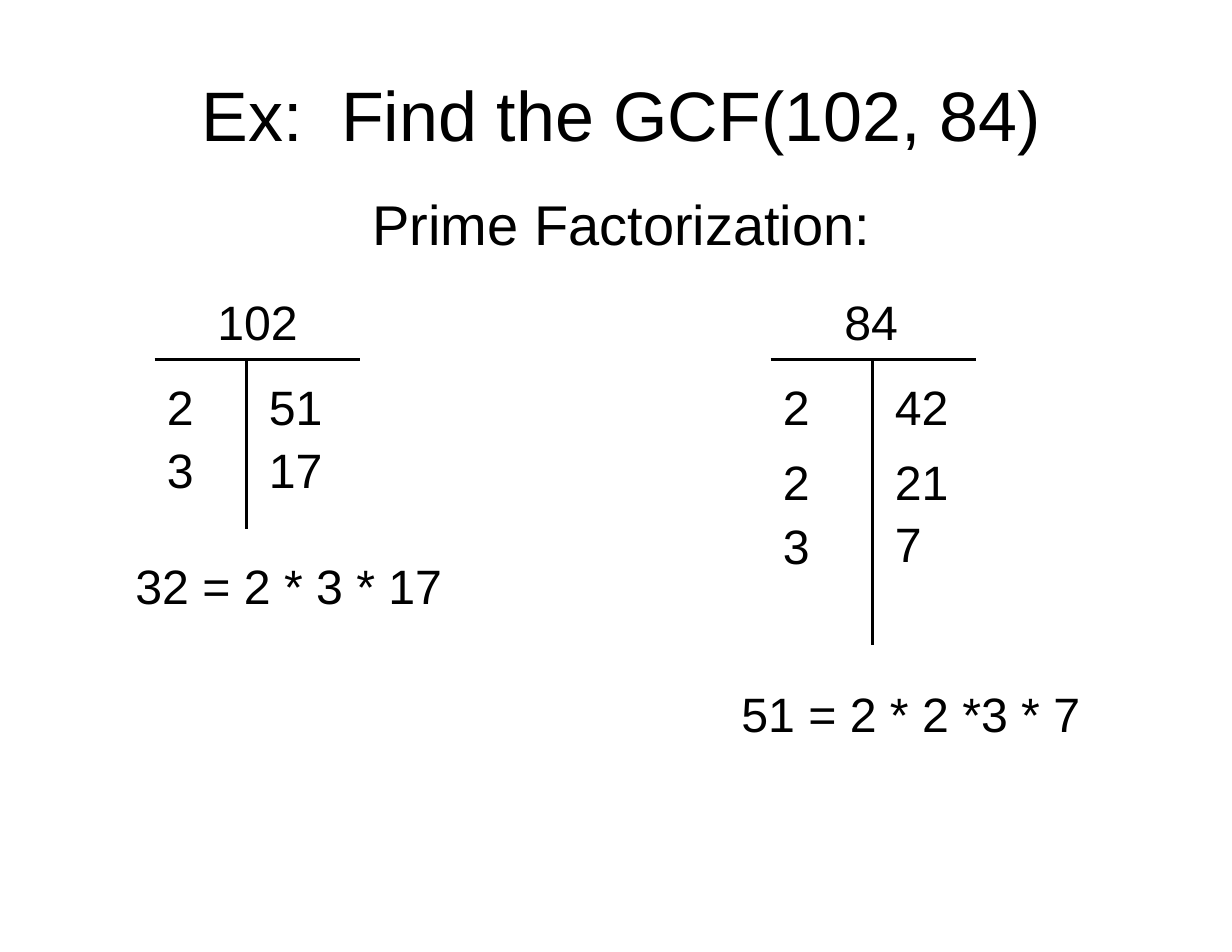
import pptx
import pptx.util
import pptx.dml.color
import pptx.enum.shapes
import pptx.enum.text
import pptx.oxml.ns
import lxml.etree

Inches, Pt = pptx.util.Inches, pptx.util.Pt
BLACK = pptx.dml.color.RGBColor(0, 0, 0)
FONT = "Arial"

HEADS = [("Ex:  Find the GCF(102, 84)", 45, 0), ("Prime Factorization:", 36, 21.5)]

# Places inside a tree are measured from its left edge; rows hold (text, top).
TREES = [
    dict(left=1.38, stem=0.82, end=4.72, right=0.91,
         top=("102", 0.45, 1.01),
         primes=[("2", 3.31), ("3", 3.87)],
         rests=[("51", 3.31), ("17", 3.87)],
         result=("32 = 2 * 3 * 17", -0.28, 4.91, 3.3)),
    dict(left=6.88, stem=0.91, end=5.76, right=1.0,
         top=("84", 0.55, 1.1),
         primes=[("2", 3.31), ("2", 3.98), ("3", 4.55)],
         rests=[("42", 3.31), ("21", 3.98), ("7", 4.53)],
         result=("51 = 2 * 2 *3 * 7", -0.37, 6.05, 3.85)),
]
BAR_Y, BAR_W = 3.21, 1.83
TOP_Y, CELL_W, CELL_H = 2.55, 0.82, 0.64


def style(par, size):
    par.font.name = FONT
    par.font.size = Pt(size)
    par.font.color.rgb = BLACK


def pad(frame, top=0.06):
    frame.margin_left = frame.margin_right = Inches(0.11)
    frame.margin_top, frame.margin_bottom = Inches(top), Inches(0.06)
    frame.word_wrap = True


def label(slide, text, x, y, wide=CELL_W):
    box = slide.shapes.add_textbox(*map(Inches, (x, y, wide, CELL_H)))
    frame = box.text_frame
    pad(frame)
    frame.auto_size = pptx.enum.text.MSO_AUTO_SIZE.SHAPE_TO_FIT_TEXT
    frame.text = text
    style(frame.paragraphs[0], 31)


def rule(slide, *ends):
    line = slide.shapes.add_connector(
        pptx.enum.shapes.MSO_CONNECTOR.STRAIGHT, *map(Inches, ends))
    line.line.color.rgb = BLACK
    line.line.width = Pt(2)
    lxml.etree.SubElement(line._element.spPr, pptx.oxml.ns.qn("a:effectLst"))


def head(slide):
    title = slide.shapes.title
    title.left, title.top, title.width, title.height = map(
        Inches, (0.46, 0.47, 10.18, 1.89))
    frame = title.text_frame
    pad(frame, 0.16)
    frame.auto_size = pptx.enum.text.MSO_AUTO_SIZE.NONE
    frame.vertical_anchor = pptx.enum.text.MSO_ANCHOR.MIDDLE
    frame.text = "\n".join(text for text, _, _ in HEADS)
    for par, (_, size, gap) in zip(frame.paragraphs, HEADS):
        par.alignment = pptx.enum.text.PP_ALIGN.CENTER
        par.space_before = Pt(gap)
        style(par, size)


def draw(slide, tree):
    left = tree["left"]
    stem = left + tree["stem"]
    rule(slide, left, BAR_Y, left + BAR_W, BAR_Y)
    rule(slide, stem, BAR_Y, stem, tree["end"])
    text, shift, wide = tree["top"]
    label(slide, text, left + shift, TOP_Y, wide)
    for x, rows in ((left, tree["primes"]), (left + tree["right"], tree["rests"])):
        for text, y in rows:
            label(slide, text, x, y)
    text, shift, y, wide = tree["result"]
    label(slide, text, left + shift, y, wide)


def main():
    deck = pptx.Presentation()
    deck.slide_width, deck.slide_height = Inches(11), Inches(8.5)
    slide = deck.slides.add_slide(deck.slide_layouts[5])
    head(slide)
    for tree in TREES:
        draw(slide, tree)
    deck.save("out.pptx")


if __name__ == "__main__":
    main()
